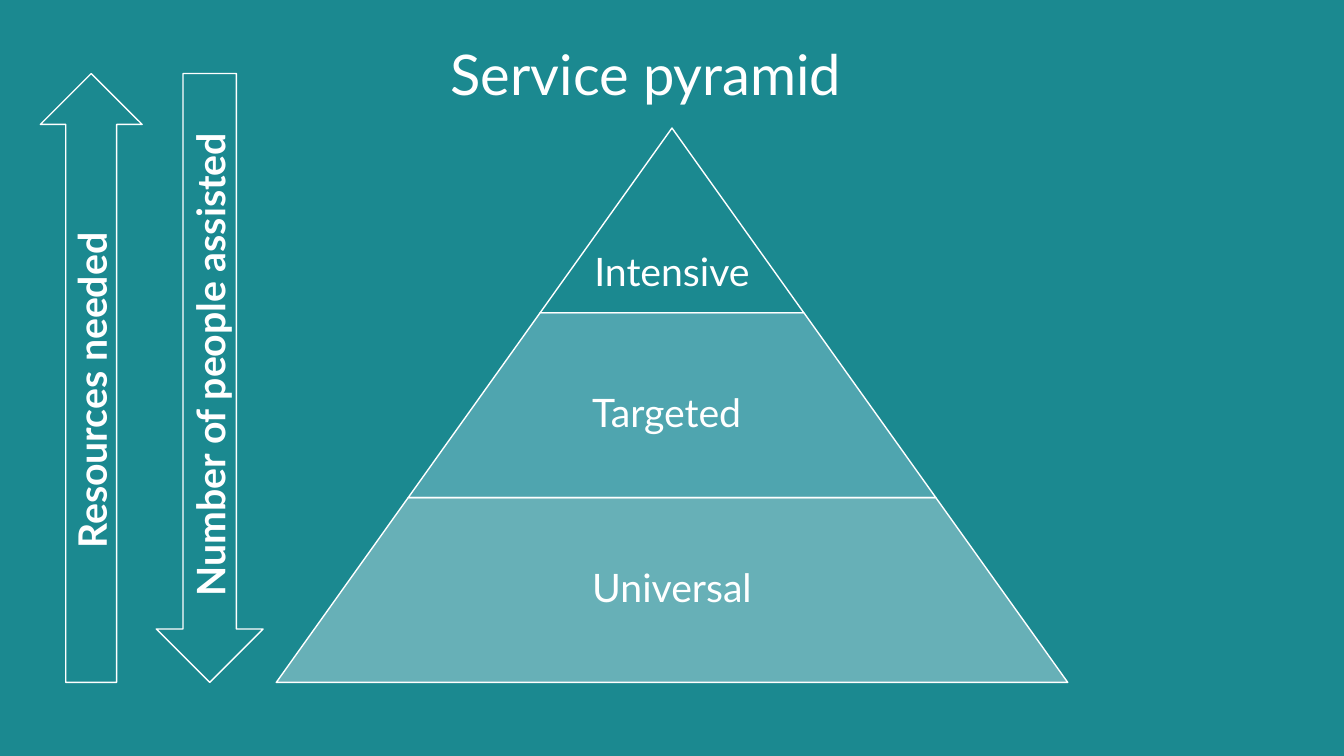
from pptx import Presentation
from pptx import util as u
from pptx.dml import color
from pptx.enum import shapes, text
from pptx.oxml import ns
from lxml import etree

WIDE, HIGH = 13.33, 7.5
TEAL, WHITE = "1B8990", "FFFFFF"
KIND = shapes.MSO_SHAPE


def rgb(code):
    return color.RGBColor.from_string(code)


def inch(*box):
    return [u.Inches(n) for n in box]


def write(frame, words, size, align, bold=False):
    para = frame.paragraphs[0]
    para.alignment = align
    run = para.add_run()
    run.text = words
    run.font.name = "Lato"
    run.font.size = u.Pt(size)
    run.font.bold = bold
    run.font.color.rgb = rgb(WHITE)
    return para


def draw(group, kind, box, code, alpha=100):
    shape = group.add_shape(kind, *inch(*box))
    shape.shadow.inherit = False
    shape.fill.solid()
    shape.fill.fore_color.rgb = rgb(code)
    shape.line.color.rgb = rgb(WHITE)
    shape.line.width = u.Pt(1)
    if alpha < 100:
        tint = shape.element.spPr.find(ns.qn("a:solidFill"))[0]
        etree.SubElement(tint, ns.qn("a:alpha"), val=str(alpha * 1000))
    return shape


def title(slide, box, words):
    head = slide.shapes.title
    head.left, head.top, head.width, head.height = inch(*box)
    frame = head.text_frame
    frame.auto_size = text.MSO_AUTO_SIZE.NONE
    frame.vertical_anchor = text.MSO_ANCHOR.TOP
    write(frame, words, 40, text.PP_ALIGN.LEFT)


def arrow(slide, box, kind, words):
    shape = draw(slide.shapes, kind, box, TEAL)
    frame = shape.text_frame
    frame.vertical_anchor = text.MSO_ANCHOR.MIDDLE
    shape.element.txBody.bodyPr.set("vert", "vert270")
    write(frame, words, 28, text.PP_ALIGN.CENTER, True)


def label(group, box, words):
    frame = group.add_textbox(*inch(*box)).text_frame
    frame.word_wrap = True
    frame.vertical_anchor = text.MSO_ANCHOR.MIDDLE
    frame.margin_left = frame.margin_right = u.Inches(0.04)
    frame.margin_top = frame.margin_bottom = u.Inches(0.04)
    write(frame, words, 28, text.PP_ALIGN.CENTER).line_spacing = 0.9


def pyramid(slide, box, tiers):
    left, top, width, height = box
    group = slide.shapes.add_group_shape().shapes
    rise = height / len(tiers)
    inset = width / len(tiers) / 2
    mid = left + width / 2
    for row, (words, code, alpha, right, down) in enumerate(tiers):
        span = 2 * inset * (row + 1)
        y = top + row * rise
        tier = draw(group, KIND.TRAPEZOID, (mid - span / 2, y, span, rise), code, alpha)
        tier.adjustments[0] = inset / rise
        wide = 2 * inset
        spot = (mid - wide / 2 + right * wide, y + (down + 0.35) * rise, wide, rise * 0.3)
        label(group, spot, words)


def main():
    deck = Presentation()
    deck.slide_width, deck.slide_height = inch(WIDE, HIGH)
    slide = deck.slides.add_slide(deck.slide_layouts[5])
    fill = slide.background.fill
    fill.solid()
    fill.fore_color.rgb = rgb(TEAL)
    pyramid(slide, (2.74, 1.27, 7.85, 5.5), [
        ("Intensive", TEAL, 90, 0, 0.29),
        ("Targeted", "66B1BD", 70, -0.02, 0.05),
        ("Universal", "B3D8DE", 50, 0, 0),
    ])
    arrow(slide, (0.4, 0.73, 1.01, 6.04), KIND.UP_ARROW, "Resources needed")
    arrow(slide, (1.55, 0.73, 1.06, 6.04), KIND.DOWN_ARROW, "Number of people assisted")
    title(slide, (4.37, 0.34, 4.59, 0.77), "Service pyramid")
    deck.save("out.pptx")


if __name__ == "__main__":
    main()
